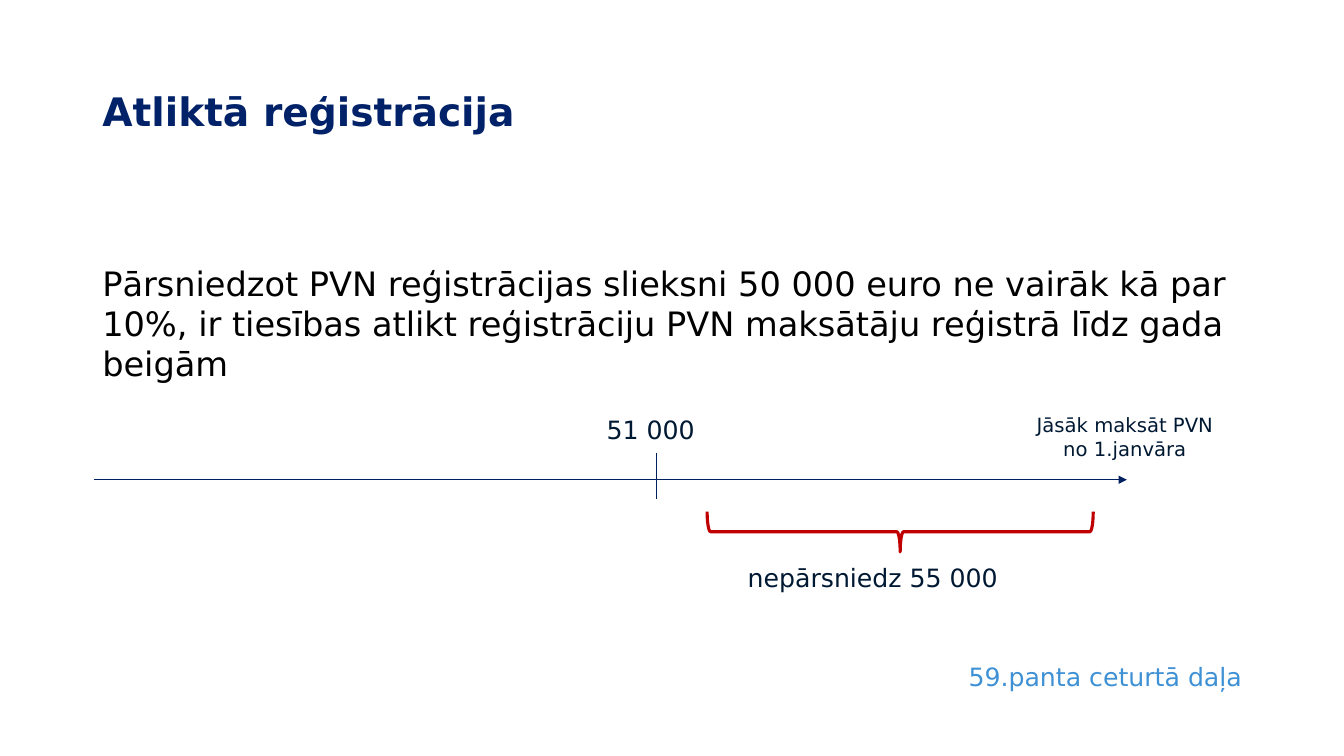
from pptx import Presentation
from pptx.dml.color import RGBColor
from pptx.enum import shapes, text
from pptx.oxml import parse_xml
from pptx.oxml.ns import nsdecls
from pptx.util import Pt

LEFT, MID = text.PP_ALIGN.LEFT, text.PP_ALIGN.CENTER


def write(box, words, size, color, align=LEFT, bold=False):
    frame = box.text_frame
    frame.word_wrap = True
    frame.text = words
    for para in frame.paragraphs:
        para.alignment = align
        for run in para.runs:
            font = run.font
            font.name, font.size, font.bold = "DejaVu Sans", Pt(size), bold
            font.color.rgb = RGBColor.from_string(color)


def stroke(shape, color, width):
    """Set the line and take the shadow away."""
    shape.line.color.rgb = RGBColor.from_string(color)
    shape.line.width = Pt(width)
    shape._element.spPr.append(parse_xml(f"<a:effectLst {nsdecls('a')}/>"))


deck = Presentation()
deck.slide_width, deck.slide_height = Pt(960), Pt(540)
slide = deck.slides.add_slide(deck.slide_layouts[5])

title = slide.shapes.title
title.left, title.top, title.width, title.height = Pt(66), Pt(28.8), Pt(657.4), Pt(104.4)
write(title, "Atliktā reģistrācija", 28, "012269", bold=True)
title.text_frame.vertical_anchor = text.MSO_ANCHOR.MIDDLE
title.text_frame.auto_size = text.MSO_AUTO_SIZE.NONE
title.text_frame.paragraphs[0].line_spacing = 0.9

rule = ("Pārsniedzot PVN reģistrācijas slieksni 50 000 euro ne vairāk kā par 10%, "
        "ir tiesības atlikt reģistrāciju PVN maksātāju reģistrā līdz gada beigām")
labels = [
    (66, 184, 828, 94, rule, 24, "000000", LEFT),
    (684.7, 468.7, 215.3, 29, "59.panta ceturtā daļa", 18, "3F91D5", LEFT),
    (426.2, 292.3, 100.8, 29, "51 000", 18, "001933", LEFT),
    (730, 291.6, 147, 41, "Jāsāk maksāt PVN\nno 1.janvāra", 14, "001933", MID),
    (527, 398.2, 219.6, 29, "nepārsniedz 55 000", 18, "001933", LEFT),
]
for x, y, w, h, words, size, color, align in labels:
    box = slide.shapes.add_textbox(Pt(x), Pt(y), Pt(w), Pt(h))
    write(box, words, size, color, align)

straight = shapes.MSO_CONNECTOR.STRAIGHT
axis = slide.shapes.add_connector(straight, Pt(67), Pt(342.7), Pt(805), Pt(342.7))
tick = slide.shapes.add_connector(straight, Pt(468.7), Pt(323.3), Pt(468.7), Pt(356.4))
for line in (axis, tick):
    stroke(line, "002060", 0.5)
axis.line._get_or_add_ln().append(
    parse_xml(f'<a:tailEnd {nsdecls("a")} type="triangle"/>'))

brace = slide.shapes.add_shape(
    shapes.MSO_SHAPE.RIGHT_BRACE, Pt(628.6), Pt(241.9), Pt(28.8), Pt(275.8))
brace.rotation = 90
brace.fill.background()
stroke(brace, "C00000", 2.25)

deck.save("out.pptx")
